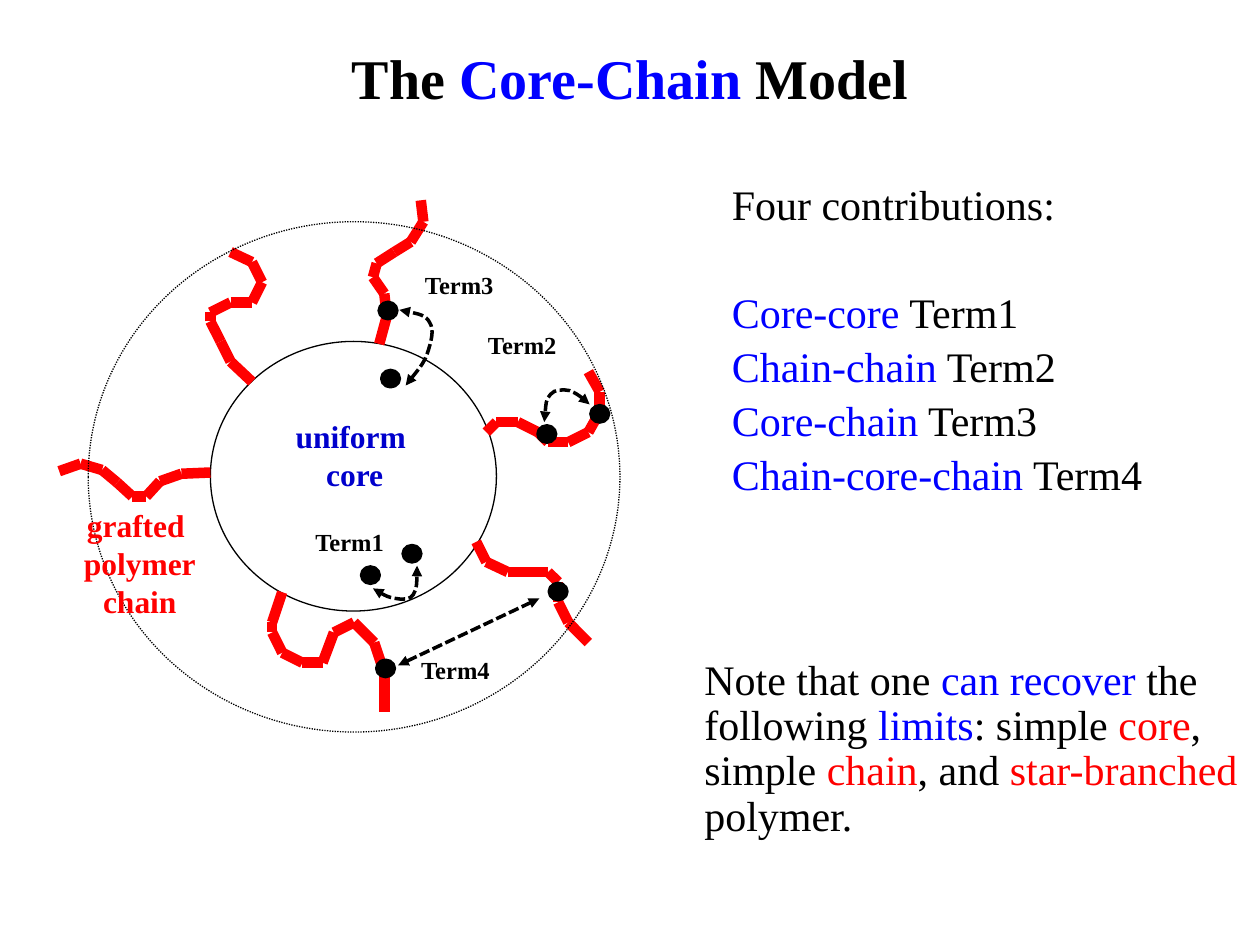
from itertools import pairwise

from lxml import etree
from pptx import Presentation
from pptx.dml.color import RGBColor
from pptx.enum.dml import MSO_LINE
from pptx.enum.shapes import MSO_CONNECTOR, MSO_SHAPE
from pptx.enum.text import MSO_ANCHOR, PP_ALIGN
from pptx.oxml.ns import qn
from pptx.util import Inches, Pt

BLACK = RGBColor(0x00, 0x00, 0x00)
BLUE = RGBColor(0x00, 0x00, 0xFF)
DARK_BLUE = RGBColor(0x00, 0x00, 0xCC)
RED = RGBColor(0xFF, 0x00, 0x00)
FONT = "Times New Roman"
CENTER, LEFT = PP_ALIGN.CENTER, PP_ALIGN.LEFT
MIDDLE = MSO_ANCHOR.MIDDLE
OVAL = MSO_SHAPE.OVAL
STRAIGHT = MSO_CONNECTOR.STRAIGHT
DOTTED, DASHED = MSO_LINE.ROUND_DOT, MSO_LINE.SQUARE_DOT

CHAINS = [
    [(3.86, 3.43), (3.94, 3.35), (4.11, 3.35), (4.27, 3.43), (4.35, 3.51),
     (4.51, 3.51), (4.67, 3.43), (4.76, 3.27), (4.76, 3.11), (4.67, 2.95)],
    [(3.78, 4.3), (3.86, 4.46), (4.03, 4.54), (4.19, 4.54), (4.35, 4.54),
     (4.43, 4.62), (4.43, 4.78), (4.51, 4.94), (4.67, 5.1)],
    [(2, 3.03), (1.83, 2.87), (1.75, 2.71), (1.67, 2.55), (1.67, 2.48),
     (1.83, 2.4), (2, 2.4), (2.08, 2.24), (2, 2.08), (1.83, 2)],
    [(1.67, 3.75), (1.44, 3.76), (1.27, 3.82), (1.16, 3.94), (1.05, 3.94),
     (0.93, 3.83), (0.81, 3.73), (0.64, 3.68), (0.47, 3.74)],
    [(2.24, 4.7), (2.16, 4.94), (2.16, 5.02), (2.24, 5.18), (2.4, 5.26),
     (2.56, 5.26), (2.65, 5.02), (2.81, 4.94), (2.97, 5.1), (3.05, 5.34),
     (3.05, 5.65)],
    [(3.01, 2.73), (3.07, 2.51), (3.05, 2.33), (2.96, 2.2), (2.99, 2.09),
     (3.13, 2), (3.26, 1.92), (3.36, 1.76), (3.34, 1.59)],
]
DOTS = [(4.27, 3.38), (4.69, 3.22), (2.87, 4.5), (3.2, 4.33),
        (3.03, 2.94), (3.01, 2.4), (2.99, 5.24), (4.36, 4.63)]
ARCS = [
    [(2.96, 4.67), (3.02, 4.71), (3.08, 4.74), (3.14, 4.75),
     (3.19, 4.76), (3.26, 4.76), (3.28, 4.72),
     (3.31, 4.67), (3.31, 4.58), (3.31, 4.49)],
    [(4.68, 3.21), (4.63, 3.16), (4.57, 3.12), (4.52, 3.1),
     (4.47, 3.09), (4.4, 3.09), (4.37, 3.13),
     (4.33, 3.17), (4.33, 3.26), (4.32, 3.35)],
    [(3.22, 3.06), (3.29, 2.97), (3.36, 2.89), (3.39, 2.81),
     (3.42, 2.72), (3.45, 2.62), (3.41, 2.56),
     (3.38, 2.5), (3.27, 2.48), (3.17, 2.46)],
]
TERM_LABELS = [("Term1", 2.33, 4.13), ("Term2", 3.7, 2.57),
               ("Term3", 3.2, 2.09), ("Term4", 3.17, 5.15)]
CONTRIBUTIONS = [("Core-core", " Term1"), ("Chain-chain", " Term2"),
                 ("Core-chain", " Term3"), ("Chain-core-chain", " Term4")]


def write(tf, paragraphs, size=24, bold=False, align=LEFT, spacing=None, before=0):
    for i, runs in enumerate(paragraphs):
        p = tf.paragraphs[0] if i == 0 else tf.add_paragraph()
        p.alignment = align
        p.line_spacing = spacing
        p.space_before = Pt(before)
        for text, color in runs:
            r = p.add_run()
            r.text = text
            r.font.name = FONT
            r.font.size = Pt(size)
            r.font.bold = bold
            r.font.color.rgb = color


def add_text(shapes, x, y, w, h, paragraphs, wrap=True, **fmt):
    tf = shapes.add_textbox(Inches(x), Inches(y), Inches(w), Inches(h)).text_frame
    tf.word_wrap = wrap
    write(tf, paragraphs, **fmt)
    return tf


def style_line(sp, color, width, dash=None):
    sp.line.color.rgb = color
    sp.line.width = Pt(width)
    if dash:
        sp.line.dash_style = dash


def add_arrowheads(sp):
    ln = sp.line._get_or_add_ln()
    for end in ("a:headEnd", "a:tailEnd"):
        etree.SubElement(ln, qn(end), type="triangle")


def add_ellipse(shapes, x, y, w, h, width, fill=None, dash=None):
    sp = shapes.add_shape(OVAL, Inches(x), Inches(y), Inches(w), Inches(h))
    sp.shadow.inherit = False
    if fill is None:
        sp.fill.background()
    else:
        sp.fill.solid()
        sp.fill.fore_color.rgb = fill
    style_line(sp, BLACK, width, dash)


def add_line(shapes, start, end, color, width, dash=None):
    x1, y1, x2, y2 = (Inches(v) for v in (*start, *end))
    sp = shapes.add_connector(STRAIGHT, x1, y1, x2, y2)
    style_line(sp, color, width, dash)
    etree.SubElement(sp._element.spPr, qn("a:effectLst"))
    return sp


def add_arc(shapes, points):
    start, *rest = [(Inches(x), Inches(y)) for x, y in points]
    builder = shapes.build_freeform(*start)
    builder.add_line_segments(rest, close=False)
    sp = builder.convert_to_shape()
    sp.shadow.inherit = False
    sp.fill.background()
    style_line(sp, BLACK, 2, DASHED)
    add_arrowheads(sp)
    segments = list(sp._element.iter(qn("a:lnTo")))
    outline = segments[0].getparent()
    for i in range(0, len(segments), 3):
        curve = etree.SubElement(outline, qn("a:cubicBezTo"))
        for segment in segments[i:i + 3]:
            curve.append(segment[0])
            outline.remove(segment)


def add_diagram(s):
    shapes = s.shapes.add_group_shape().shapes
    add_ellipse(shapes, 1.67, 2.71, 2.27, 2.14, 0.75)
    for chain in CHAINS:
        for start, end in pairwise(chain):
            add_line(shapes, start, end, RED, 6)
    add_ellipse(shapes, 0.7, 1.76, 4.22, 4.05, 0.75, dash=DOTTED)
    label = {"wrap": False, "bold": True, "align": CENTER}
    add_text(shapes, 2.18, 3.26, 1.27, 0.78,
             [[(t, DARK_BLUE)] for t in ("uniform ", "core")], size=18, **label)
    add_text(shapes, 0.46, 3.97, 1.3, 1.17,
             [[(t, RED)] for t in ("grafted ", "polymer", "chain")], size=18, **label)
    for x, y in DOTS:
        add_ellipse(shapes, x, y, 0.14, 0.13, 2, fill=BLACK)
    for arc in ARCS:
        add_arc(shapes, arc)
    add_arrowheads(add_line(shapes, (3.16, 5.28), (4.28, 4.75), BLACK, 2, DASHED))
    for text, x, y in TERM_LABELS:
        add_text(shapes, x, y, 0.89, 0.39, [[(text, BLACK)]], size=14, **label)


def add_title(s):
    title = s.shapes.title
    title.left, title.top = Inches(0.5), Inches(-0.01)
    title.width, title.height = Inches(9), Inches(1.25)
    title.text_frame.vertical_anchor = MIDDLE
    write(title.text_frame,
          [[("The ", BLACK), ("Core-Chain", BLUE), (" Model", BLACK)]],
          size=32, bold=True, align=CENTER)


def add_contributions(s):
    rows = [[(name, BLUE), (term, BLACK)] for name, term in CONTRIBUTIONS]
    tf = add_text(s.shapes, 5.71, 1.41, 3.7, 3.6,
                  [[("Four contributions:", BLACK)]] + rows, spacing=0.9, before=5)
    tf.paragraphs[1].space_before = Pt(36)


def add_note(s):
    note = [("Note that one ", BLACK), ("can recover ", BLUE),
            ("the following ", BLACK), ("limits", BLUE), (": simple ", BLACK),
            ("core", RED), (", simple ", BLACK), ("chain", RED),
            (", and ", BLACK), ("star-branched", RED), (" polymer.", BLACK)]
    tf = add_text(s.shapes, 5.11, 5.18, 4.89, 1.76, [note], spacing=0.9, before=5)
    tf.margin_left = Inches(0.48)


def main():
    prs = Presentation()
    prs.slide_width, prs.slide_height = Inches(10), Inches(7.5)
    s = prs.slides.add_slide(prs.slide_layouts[5])
    add_diagram(s)
    add_title(s)
    add_contributions(s)
    add_note(s)
    prs.save("out.pptx")


if __name__ == "__main__":
    main()
